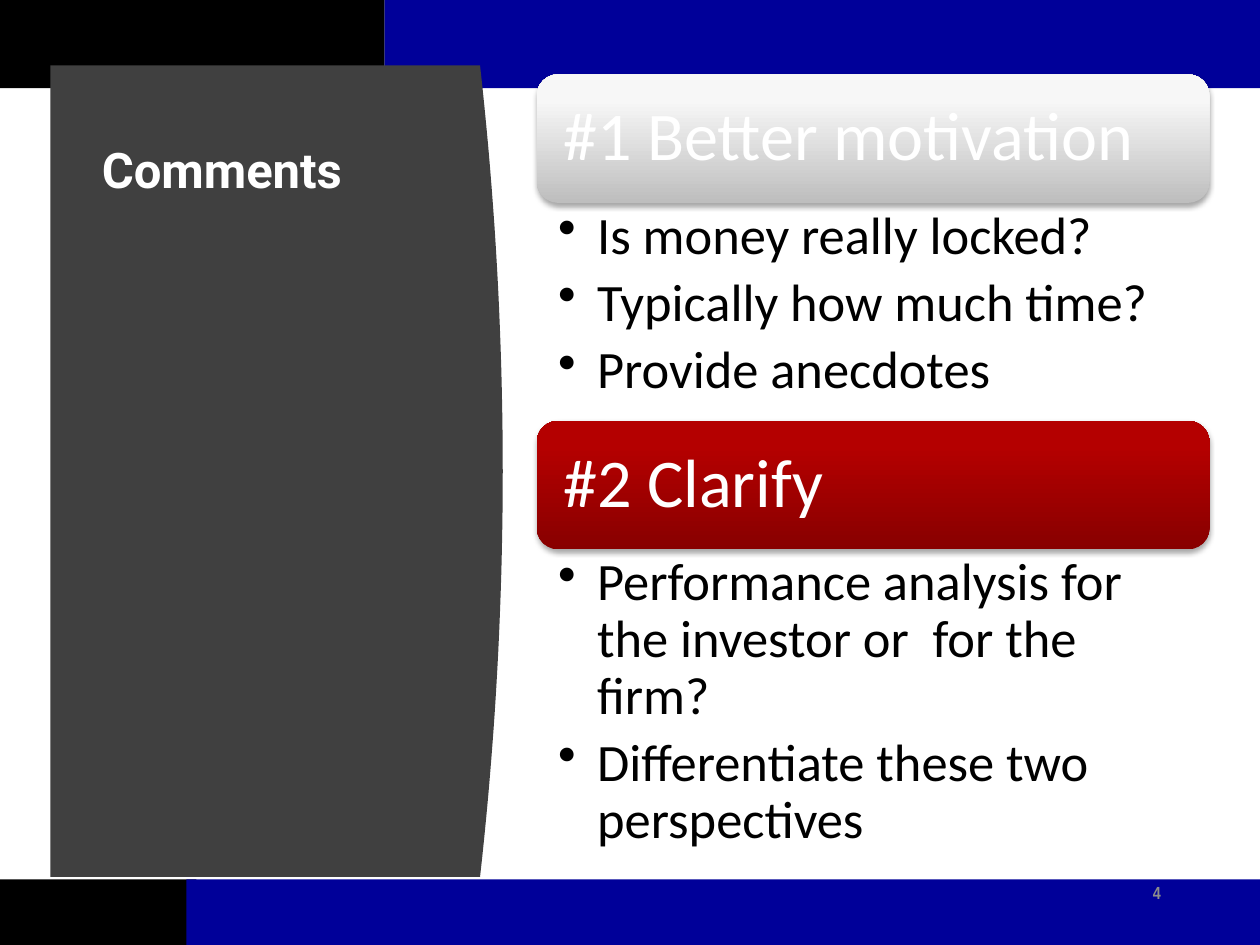
from pptx import Presentation, util as u
from pptx.dml.color import RGBColor
from pptx.enum import shapes, text
from pptx.oxml import parse_xml
from pptx.oxml.ns import nsdecls

Inches = u.Inches


def color(value):
    return RGBColor.from_string(value)


class SlideBuilder:
    """Holds the style and the slide that is being built."""

    heading_font = "Roboto"
    body_font = "Calibri"
    number_font = "Arial Narrow"
    white, black, blue = "FFFFFF", "000000", "000099"
    panel_gray, number_gray = "404040", "8C8C8C"

    def __init__(self, slide):
        self.slide = slide

    def band(self, left, top, width, height, fill):
        shape = self.slide.shapes.add_shape(
            shapes.MSO_SHAPE.RECTANGLE,
            Inches(left), Inches(top), Inches(width), Inches(height))
        self.plain(shape, fill)

    def plain(self, shape, fill):
        shape.shadow.inherit = False
        shape.fill.solid()
        shape.fill.fore_color.rgb = color(fill)
        shape.line.fill.background()

    def curved_panel(self, left, top, right, bottom, bulge, steps=40):
        """Draw a panel whose right side bows outwards as a parabola."""
        middle, half = (top + bottom) / 2, (bottom - top) / 2
        points = []
        for step in range(steps + 1):
            y = top + (bottom - top) * step / steps
            x = right + bulge * (1 - ((y - middle) / half) ** 2)
            points.append((Inches(x), Inches(y)))
        points.append((Inches(left), Inches(bottom)))
        builder = self.slide.shapes.build_freeform(
            Inches(left), Inches(top), scale=1.0)
        builder.add_line_segments(points, close=True)
        self.plain(builder.convert_to_shape(), self.panel_gray)

    def text_box(self, left, top, width, height, lines, size, font, fill,
                 bold=False, insets=(0.1, 0.05, 0.1, 0.05), space_after=0,
                 line_spacing=0.9, align=text.PP_ALIGN.LEFT,
                 anchor=text.MSO_ANCHOR.TOP):
        box = self.slide.shapes.add_textbox(
            Inches(left), Inches(top), Inches(width), Inches(height))
        frame = box.text_frame
        frame.word_wrap = True
        frame.vertical_anchor = anchor
        (frame.margin_left, frame.margin_top,
         frame.margin_right, frame.margin_bottom) = map(Inches, insets)
        frame.text = "\n".join(lines)
        for paragraph in frame.paragraphs:
            paragraph.alignment = align
            paragraph.line_spacing = line_spacing
            paragraph.space_after = u.Pt(space_after)
            for run in paragraph.runs:
                run.font.size = u.Pt(size)
                run.font.name = font
                run.font.bold = bold
                run.font.color.rgb = color(fill)
        return frame

    def heading_bar(self, left, top, width, height, title, bottom_color, top_color):
        shape = self.slide.shapes.add_shape(
            shapes.MSO_SHAPE.ROUNDED_RECTANGLE,
            Inches(left), Inches(top), Inches(width), Inches(height))
        shape.line.fill.background()
        shape.fill.gradient()
        shape.fill.gradient_angle = 90
        stops = shape.fill.gradient_stops
        for stop, position, value in zip(stops, (0, 0.8), (bottom_color, top_color)):
            stop.position = position
            stop.color.rgb = color(value)
        self.drop_shadow(shape)
        pad = 0.05
        self.text_box(left + pad, top + pad, width - 2 * pad, height - 2 * pad,
                      [title], 39, self.body_font, self.white,
                      insets=(0.16,) * 4, anchor=text.MSO_ANCHOR.MIDDLE)

    def drop_shadow(self, shape):
        shape._element.spPr.append(parse_xml(
            f'<a:effectLst {nsdecls("a")}>'
            f'<a:outerShdw blurRad="{u.Pt(3.1)}" dist="{u.Pt(1.8)}" '
            'dir="5400000" rotWithShape="0">'
            f'<a:srgbClr val="{self.black}"><a:alpha val="35000"/></a:srgbClr>'
            '</a:outerShdw></a:effectLst>'))

    def bullet_list(self, left, top, width, height, items):
        frame = self.text_box(left, top, width, height, items, 30,
                              self.body_font, self.black, space_after=6,
                              insets=(0.17, 0.05, 0.3, 0.05))
        for paragraph in frame.paragraphs:
            properties = paragraph._p.get_or_add_pPr()
            properties.set("marL", str(Inches(0.31)))
            properties.set("indent", str(-Inches(0.31)))
            properties.append(parse_xml(f'<a:buChar {nsdecls("a")} char="•"/>'))


SECTIONS = [
    ("#1 Better motivation", "BEBEBE", "F7F7F7", 0.59, 1.72,
     ["Is money really locked?", "Typically how much time?", "Provide anecdotes"]),
    ("#2 Clarify", "880000", "B40000", 3.34, 2.52,
     ["Performance analysis for the investor or  for the firm?",
      "Differentiate these two perspectives"]),
]


def main():
    presentation = Presentation()
    presentation.slide_width = Inches(10)
    presentation.slide_height = Inches(7.5)
    slide = presentation.slides.add_slide(presentation.slide_layouts[6])
    builder = SlideBuilder(slide)

    builder.band(0, 6.98, 1.56, 0.52, builder.black)
    builder.band(1.48, 6.98, 8.52, 0.52, builder.blue)
    builder.band(3.05, 0, 6.95, 0.7, builder.blue)
    builder.band(0, 0, 3.05, 0.7, builder.black)

    builder.curved_panel(0.4, 0.52, 3.81, 6.96, bulge=0.18)
    builder.text_box(0.71, 1.11, 2.8, 5.24, ["Comments"], 28,
                     builder.heading_font, builder.white, bold=True)
    builder.text_box(8.8, 6.95, 0.51, 0.4, ["4"], 10, builder.number_font,
                     builder.number_gray, bold=True, space_after=6,
                     line_spacing=1.0, align=text.PP_ALIGN.RIGHT)

    left, width, bar_height = 4.26, 5.34, 1.02
    for title, bottom_color, top_color, top, list_height, items in SECTIONS:
        builder.heading_bar(left, top, width, bar_height, title,
                            bottom_color, top_color)
        builder.bullet_list(left, top + bar_height, width, list_height, items)

    presentation.save("out.pptx")


if __name__ == "__main__":
    main()
